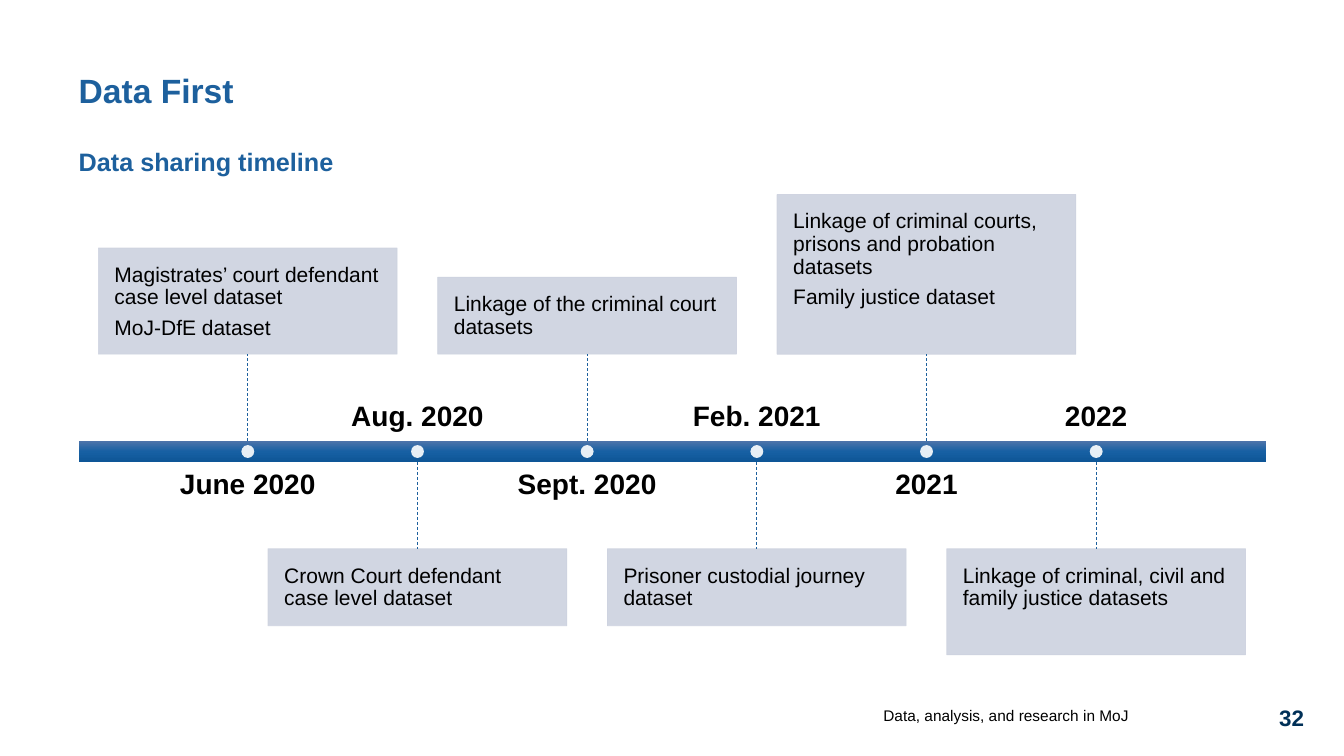
from copy import deepcopy
from dataclasses import dataclass

from pptx import Presentation
from pptx.dml.color import RGBColor
from pptx.dml.fill import FillFormat
from pptx.enum.dml import MSO_LINE
from pptx.enum.shapes import MSO_CONNECTOR, MSO_SHAPE
from pptx.enum.text import MSO_ANCHOR, MSO_AUTO_SIZE, PP_ALIGN
from pptx.oxml.ns import qn
from pptx.shapes.autoshape import Shape
from pptx.slide import Slide
from pptx.text.text import TextFrame
from pptx.util import Pt

RECTANGLE, OVAL = MSO_SHAPE.RECTANGLE, MSO_SHAPE.OVAL
STRAIGHT, DASH = MSO_CONNECTOR.STRAIGHT, MSO_LINE.DASH
TOP, MIDDLE, BOTTOM = MSO_ANCHOR.TOP, MSO_ANCHOR.MIDDLE, MSO_ANCHOR.BOTTOM
LEFT, CENTER, RIGHT = PP_ALIGN.LEFT, PP_ALIGN.CENTER, PP_ALIGN.RIGHT
NO_AUTOFIT = MSO_AUTO_SIZE.NONE

BLUE, NAVY, BLACK, WHITE, CARD_GREY = "1D609D", "003057", "000000", "FFFFFF", "CDD2DF"
BAR_GRADIENT = [(0, "4E74AA"), (50, "1760A3"), (100, "0E5697")]

MARGIN, CONTENT_WIDTH = 56.2, 848.2
BAR_TOP, BAR_HEIGHT = 315, 15
FIRST_CENTER, STEP = 177, 121.2
STEM_LENGTH, CARD_WIDTH, CARD_INSET = 62, 213.4, 11.5
DATE_WIDTH, DATE_HEIGHT, DATE_GAP = 194, 41.6, 6
DOT_SIZE = 9.2


@dataclass
class TextStyle:
    size: float
    color: str = BLACK
    bold: bool = False
    align: PP_ALIGN = LEFT
    anchor: MSO_ANCHOR = TOP
    inset: float = 0
    line_spacing: float = 1
    space_after: float = 0


@dataclass
class Milestone:
    date: str
    datasets: list[str]
    card_height: float
    card_above: bool


MILESTONES = [
    Milestone("June 2020", ["Magistrates’ court defendant case level dataset",
                            "MoJ-DfE dataset"], 75.8, True),
    Milestone("Aug. 2020", ["Crown Court defendant case level dataset"], 55, False),
    Milestone("Sept. 2020", ["Linkage of the criminal court datasets"], 55, True),
    Milestone("Feb. 2021", ["Prisoner custodial journey dataset"], 55, False),
    Milestone("2021", ["Linkage of criminal courts, prisons and probation datasets",
                       "Family justice dataset"], 114, True),
    Milestone("2022", ["Linkage of criminal, civil and family justice datasets"], 75.8, False),
]


def rgb(value: str) -> RGBColor:
    return RGBColor.from_string(value)


def paint(fill: FillFormat, color: str, opacity: int = 100) -> None:
    fill.solid()
    fill.fore_color.rgb = rgb(color)
    if opacity < 100:
        color_element = fill._xPr.find(qn("a:solidFill"))[0]
        alpha = color_element.makeelement(qn("a:alpha"), {"val": str(opacity * 1000)})
        color_element.append(alpha)


def write(frame: TextFrame, paragraphs: list[str], style: TextStyle) -> None:
    frame.word_wrap = True
    frame.auto_size = NO_AUTOFIT
    frame.vertical_anchor = style.anchor
    frame.margin_left = frame.margin_right = Pt(style.inset)
    frame.margin_top = frame.margin_bottom = Pt(style.inset)
    for index, wording in enumerate(paragraphs):
        paragraph = frame.add_paragraph() if index else frame.paragraphs[0]
        paragraph.alignment = style.align
        paragraph.line_spacing = style.line_spacing
        paragraph.space_before = Pt(0)
        paragraph.space_after = Pt(style.space_after)
        run = paragraph.add_run()
        run.text = wording
        run.font.name = "Arial"
        run.font.size = Pt(style.size)
        run.font.bold = style.bold
        run.font.color.rgb = rgb(style.color)


def place(shape: Shape, left: float, top: float, width: float, height: float) -> None:
    shape.left, shape.top = Pt(left), Pt(top)
    shape.width, shape.height = Pt(width), Pt(height)


def add_label(slide: Slide, wording: str, left: float, top: float,
              width: float, height: float, style: TextStyle) -> None:
    label = slide.shapes.add_textbox(Pt(left), Pt(top), Pt(width), Pt(height))
    write(label.text_frame, [wording], style)


def add_flat_shape(slide: Slide, preset: MSO_SHAPE, left: float, top: float,
                   width: float, height: float) -> Shape:
    shape = slide.shapes.add_shape(preset, Pt(left), Pt(top), Pt(width), Pt(height))
    shape.shadow.inherit = False
    shape.line.fill.background()
    return shape


def add_bar(slide: Slide) -> None:
    bar = add_flat_shape(slide, RECTANGLE, MARGIN, BAR_TOP, CONTENT_WIDTH, BAR_HEIGHT)
    bar.fill.gradient()
    bar.fill.gradient_angle = 270
    stops = bar.fill._xPr.find(qn("a:gradFill")).find(qn("a:gsLst"))
    stops.insert(1, deepcopy(stops[0]))
    for stop, (position, color) in zip(bar.fill.gradient_stops, BAR_GRADIENT):
        stop.position = position / 100
        stop.color.rgb = rgb(color)


def add_milestone(slide: Slide, milestone: Milestone, center: float) -> None:
    bar_bottom = BAR_TOP + BAR_HEIGHT
    if milestone.card_above:
        stem_start, stem_end = BAR_TOP, BAR_TOP - STEM_LENGTH
        card_top = stem_end - milestone.card_height
        date_top, date_anchor, card_side = bar_bottom + DATE_GAP, TOP, 2
    else:
        stem_start, stem_end = bar_bottom, bar_bottom + STEM_LENGTH
        card_top = stem_end
        date_top, date_anchor, card_side = BAR_TOP - DATE_GAP - DATE_HEIGHT, BOTTOM, 0

    add_label(slide, milestone.date, center - DATE_WIDTH / 2, date_top, DATE_WIDTH, DATE_HEIGHT,
              TextStyle(20, bold=True, align=CENTER, anchor=date_anchor, line_spacing=0.9))

    card = add_flat_shape(slide, RECTANGLE, center - CARD_WIDTH / 2, card_top,
                          CARD_WIDTH, milestone.card_height)
    paint(card.fill, CARD_GREY, 90)
    paint(card.line.fill, CARD_GREY, 90)
    card.line.width = Pt(0.5)
    write(card.text_frame, milestone.datasets,
          TextStyle(15, inset=CARD_INSET, line_spacing=0.9, space_after=5.25))

    stem = slide.shapes.add_connector(STRAIGHT, Pt(center), Pt(stem_start),
                                      Pt(center), Pt(stem_end))
    stem.end_connect(card, card_side)
    stem.line.color.rgb = rgb(BLUE)
    stem.line.width = Pt(0.5)
    stem.line.dash_style = DASH
    properties = stem._element.spPr
    properties.append(properties.makeelement(qn("a:effectLst"), {}))

    dot = add_flat_shape(slide, OVAL, center - DOT_SIZE / 2,
                         BAR_TOP + (BAR_HEIGHT - DOT_SIZE) / 2, DOT_SIZE, DOT_SIZE)
    paint(dot.fill, WHITE, 90)


def add_headings(slide: Slide) -> None:
    title, subtitle = slide.placeholders
    place(title, MARGIN, 53.3, CONTENT_WIDTH, 27.4)
    write(title.text_frame, ["Data First"], TextStyle(24, BLUE, True, line_spacing=0.9))
    place(subtitle, MARGIN, 104.4, CONTENT_WIDTH, 51)
    properties = subtitle.text_frame.paragraphs[0]._p.get_or_add_pPr()
    properties.set("marL", "0")
    properties.set("indent", "0")
    properties.append(properties.makeelement(qn("a:buNone"), {}))
    write(subtitle.text_frame, ["Data sharing timeline"],
          TextStyle(18, BLUE, True, space_after=6))


def main() -> None:
    deck = Presentation()
    deck.slide_width, deck.slide_height = Pt(960), Pt(540)
    slide = deck.slides.add_slide(deck.slide_layouts[1])
    add_headings(slide)
    add_label(slide, "Data, analysis, and research in MoJ", 582.5, 498.2, 224, 26,
              TextStyle(11, align=RIGHT, anchor=MIDDLE))
    add_label(slide, "32", 908.6, 503.3, 28, 20, TextStyle(16, NAVY, True, CENTER))
    add_bar(slide)
    for index, milestone in enumerate(MILESTONES):
        add_milestone(slide, milestone, FIRST_CENTER + index * STEP)
    deck.save("out.pptx")


if __name__ == "__main__":
    main()
